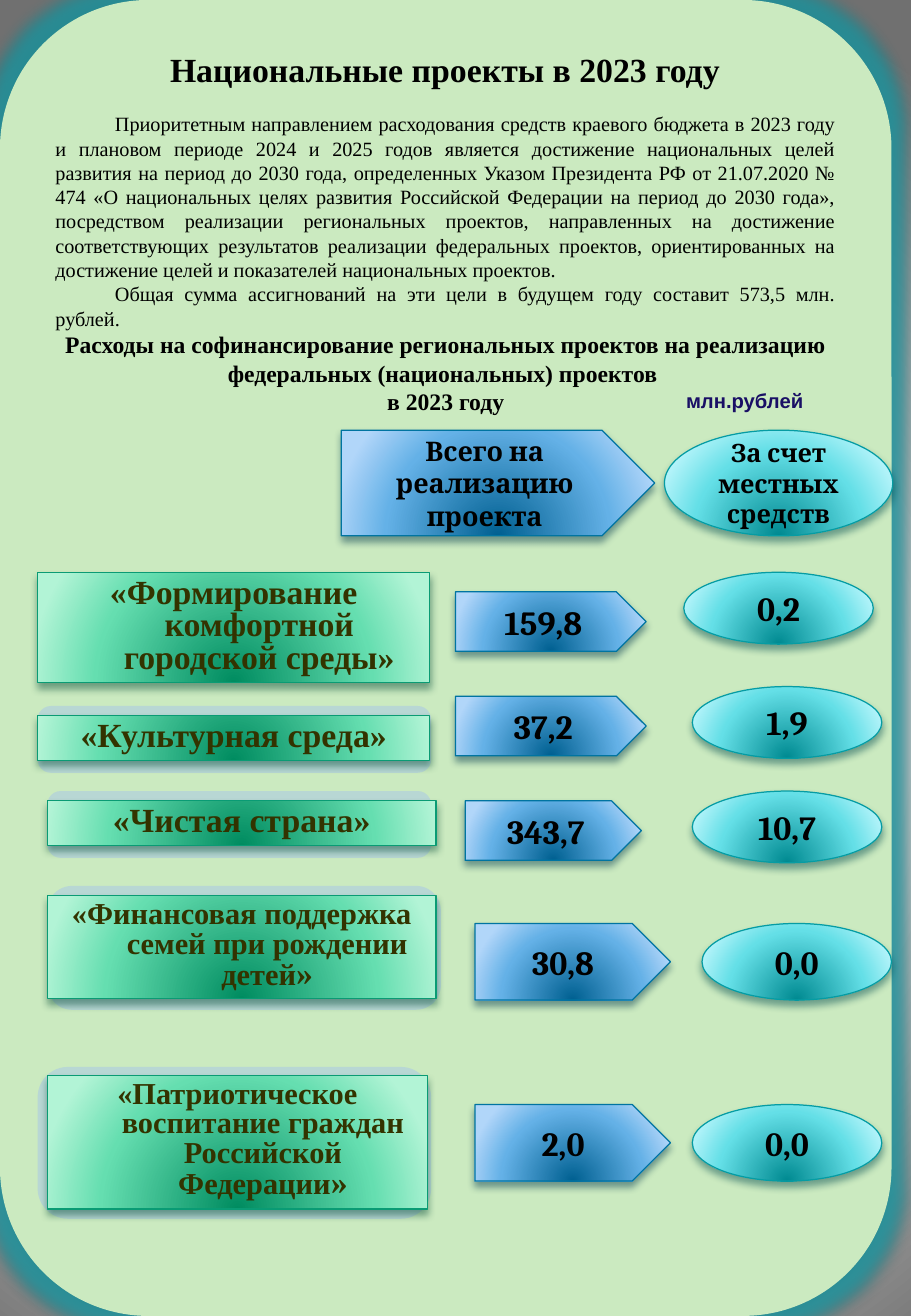
"""Build the slide on spending for national projects in 2023."""
from typing import NamedTuple, Optional

from lxml.etree import SubElement
from pptx import Presentation
from pptx.dml.color import RGBColor
from pptx.enum.shapes import MSO_SHAPE as Form
from pptx.enum.text import MSO_ANCHOR as Anchor, MSO_AUTO_SIZE as Fit, PP_ALIGN as Align
from pptx.oxml.ns import qn
from pptx.util import Inches, Pt

BLACK = RGBColor(0x00, 0x00, 0x00)
OLIVE = RGBColor(0x33, 0x33, 0x00)
NAVY = RGBColor(0x19, 0x0F, 0x65)
LIME = RGBColor(0xCB, 0xEA, 0xC0)
HAZE = RGBColor(0xA5, 0xC4, 0xE9)
TEAL = RGBColor(0x1A, 0x9D, 0xA8)
WHITE = RGBColor(0xFF, 0xFF, 0xFF)
GREY = RGBColor(0x70, 0x70, 0x70)
SERIF, SLAB, SANS = "Times New Roman", "Cambria", "Arial"


class Box(NamedTuple):
    left: float
    top: float
    width: float
    height: float


class Skin(NamedTuple):
    form: Form
    dark: RGBColor
    mid: RGBColor
    pale: RGBColor
    edge: RGBColor
    shade: RGBColor


class Row(NamedTuple):
    name: str
    tail: str
    size: int
    bar: Box
    halo: Optional[Box]
    total: str
    arrow: Box
    local: str
    oval: Box


class Part(NamedTuple):
    text: str
    size: int
    bold: bool
    align: Align
    indent: float


def skin(form: Form, *codes: str) -> Skin:
    """Make a skin from hex codes."""
    return Skin(form, *map(RGBColor.from_string, codes))


ARROW = skin(Form.PENTAGON, "006091", "64B1E7", "B1D6F9", "0074A1", "00374C")
OVAL = skin(Form.OVAL, "008A91", "64DFE7", "B1F3F9", "069CA3", "024B4E")
BAR = skin(Form.RECTANGLE, "008C60", "65DEB0", "B2F4D6", "0A9B74", "044A37")

ROWS = [
    Row("«Формирование комфортной городской среды»", "", 20, Box(0.31, 4.71, 3.23, 0.91), None,
        "159,8", Box(3.75, 4.87, 1.57, 0.49), "0,2", Box(5.63, 4.71, 1.56, 0.59)),
    Row("«Культурная среда»", "", 20, Box(0.31, 5.89, 3.23, 0.37), Box(0.31, 5.81, 3.24, 0.55),
        "37,2", Box(3.75, 5.73, 1.57, 0.49), "1,9", Box(5.7, 5.65, 1.56, 0.59)),
    Row("«Чистая страна»", "", 20, Box(0.39, 6.59, 3.2, 0.37), Box(0.39, 6.51, 3.16, 0.55),
        "343,7", Box(3.83, 6.59, 1.45, 0.49), "10,7", Box(5.7, 6.51, 1.56, 0.59)),
    Row("«Финансовая поддержка семей при рождении детей", "»", 18,
        Box(0.39, 7.37, 3.2, 0.85), Box(0.39, 7.29, 3.24, 1.02),
        "30,8", Box(3.91, 7.6, 1.61, 0.63), "0,0", Box(5.78, 7.6, 1.56, 0.63)),
    Row("«Патриотическое воспитание граждан Российской Федерации", "»", 18,
        Box(0.39, 8.85, 3.13, 1.1), Box(0.31, 8.78, 3.24, 1.25),
        "2,0", Box(3.91, 9.09, 1.61, 0.63), "0,0", Box(5.7, 9.09, 1.56, 0.63)),
]
PARTS = [
    Part("Приоритетным направлением расходования средств краевого бюджета в 2023 году и плановом "
         "периоде 2024 и 2025 годов является достижение национальных целей развития на период до "
         "2030 года, определенных Указом Президента РФ от 21.07.2020 № 474 «О национальных целях "
         "развития Российской Федерации на период до 2030 года», посредством реализации "
         "региональных проектов, направленных на достижение соответствующих результатов "
         "реализации федеральных проектов, ориентированных на достижение целей и показателей "
         "национальных проектов.", 12, False, Align.JUSTIFY, 0.49),
    Part("Общая сумма ассигнований на эти цели в будущем году составит 573,5 млн. рублей. ",
         12, False, Align.JUSTIFY, 0.49),
    Part("Расходы на софинансирование региональных проектов на реализацию федеральных "
         "(национальных) проектов ", 14, True, Align.CENTER, 0),
    Part("в 2023 году", 14, True, Align.CENTER, 0),
]


def place(box: Box) -> list:
    """Turn a box into lengths."""
    return [Inches(side) for side in box]


def write(para, text: str, size: float, face: str, color: RGBColor, bold: bool = True) -> None:
    """Add one run."""
    run = para.add_run()
    run.text = text
    run.font.size, run.font.name, run.font.bold = Pt(size), face, bold
    run.font.color.rgb = color


def indent(para, left: float, first: float) -> None:
    """Set the left margin and the first-line indent."""
    props = para._p.get_or_add_pPr()
    props.set("marL", str(Inches(left)))
    props.set("indent", str(Inches(first)))


def tint(parent, color: RGBColor, alpha: int = 100) -> None:
    """Add a colour with its opacity."""
    node = SubElement(parent, qn("a:srgbClr"), val=str(color))
    SubElement(node, qn("a:alpha"), val=str(alpha * 1000))


def blend(root, stops: list, focus: tuple) -> None:
    """Swap the first solid fill for a round gradient."""
    solid = root.find(".//" + qn("a:solidFill"))
    solid.clear()
    solid.tag = qn("a:gradFill")
    chain = SubElement(solid, qn("a:gsLst"))
    for spot, color in stops:
        tint(SubElement(chain, qn("a:gs"), pos=str(spot * 1000)), color)
    way = SubElement(solid, qn("a:path"), {"path": "circle"})
    sides = {key: str(part * 1000) for key, part in zip("ltrb", focus)}
    SubElement(way, qn("a:fillToRect"), sides)


def shade(shape, color: RGBColor, alpha: int, blur: float, dist: float) -> None:
    """Add a shadow that falls straight down."""
    node = SubElement(shape.element.spPr.find(qn("a:effectLst")), qn("a:outerShdw"),
                      blurRad=str(Pt(blur)), dist=str(Pt(dist)), dir="5400000", rotWithShape="0")
    tint(node, color, alpha)


def plain(slide, form: Form, box: Box, color: RGBColor):
    """Add a flat shape with no outline."""
    shape = slide.shapes.add_shape(form, *place(box))
    shape.shadow.inherit = False
    shape.fill.solid()
    shape.fill.fore_color.rgb = color
    shape.line.fill.background()
    return shape


def glossy(slide, look: Skin, box: Box):
    """Add a gradient shape and return it with its paragraph."""
    shape = plain(slide, look.form, box, look.mid)
    blend(shape.element, [(0, look.dark), (68, look.mid), (100, look.pale)], (50, 130, 50, -30))
    shape.line.color.rgb = look.edge
    shape.line.width = Pt(0.75)
    shade(shape, look.shade, 48, 4.5, 3)
    frame = shape.text_frame
    frame.word_wrap = True
    frame.vertical_anchor = Anchor.MIDDLE
    frame.paragraphs[0].alignment = Align.CENTER
    return shape, frame.paragraphs[0]


def badge(slide, look: Skin, box: Box, text: str, size: int = 20) -> None:
    """Add an arrow or oval with its words."""
    write(glossy(slide, look, box)[1], text, size, SLAB, BLACK)


def label(slide, row: Row) -> None:
    """Add a project name on its green bar."""
    if row.halo:
        halo = plain(slide, Form.ROUNDED_RECTANGLE, row.halo, HAZE)
        halo.adjustments[0] = 0.2
        fill = halo.element.find(".//" + qn("a:solidFill"))
        fill.clear()
        tint(fill, HAZE, 49)
    shape, para = glossy(slide, BAR, row.bar)
    shape.text_frame.vertical_anchor = Anchor.TOP
    shape.text_frame.auto_size = Fit.SHAPE_TO_FIT_TEXT
    para.line_spacing, para.space_before = 0.8, Pt(row.size / 5)
    indent(para, 0.42, -0.42)
    write(para, row.name, row.size, SERIF, OLIVE)
    if row.tail:
        write(para, row.tail, 20, SERIF, OLIVE)


def panel(slide) -> None:
    """Add the green panel with the opening text."""
    shape = plain(slide, Form.ROUNDED_RECTANGLE, Box(0, 0, 7.34, 10.83), LIME)
    glow = SubElement(shape.element.spPr.find(qn("a:effectLst")), qn("a:glow"), rad=str(Pt(18)))
    tint(glow, TEAL, 75)
    shade(shape, BLACK, 32, 3.5, 2.2)
    slide.shapes.element.insert(2, shape.element)
    frame = shape.text_frame
    frame.word_wrap, frame.vertical_anchor = True, Anchor.TOP
    frame.margin_top = Inches(0.56)
    for spot, part in enumerate(PARTS):
        para = frame.add_paragraph() if spot else frame.paragraphs[0]
        para.alignment = part.align
        indent(para, 0, part.indent)
        write(para, part.text, part.size, SERIF, BLACK, part.bold)


def head(slide) -> None:
    """Fill the title and the unit note."""
    title = slide.shapes.title
    title.left, title.top, title.width, title.height = place(Box(0.45, 0.4, 6.43, 0.33))
    frame = title.text_frame
    frame.margin_left = frame.margin_right = frame.margin_top = frame.margin_bottom = 0
    frame.vertical_anchor, frame.auto_size = Anchor.TOP, Fit.NONE
    frame.paragraphs[0].alignment = Align.CENTER
    write(frame.paragraphs[0], "Национальные проекты в 2023 году", 20, SERIF, BLACK)
    note = slide.shapes.add_textbox(*place(Box(5.55, 3.15, 1.64, 0.3))).text_frame
    note.word_wrap, note.auto_size = True, Fit.SHAPE_TO_FIT_TEXT
    write(note.paragraphs[0], "млн.рублей", 12, SANS, NAVY)


def main() -> None:
    """Draw and save the slide."""
    deck = Presentation()
    deck.slide_width, deck.slide_height = Inches(7.5), Inches(10.83)
    slide = deck.slides.add_slide(deck.slide_layouts[5])
    slide.background.fill.solid()
    blend(slide.element, [(0, WHITE), (25, WHITE), (100, GREY)], (10, 110, 10, 100))
    panel(slide)
    head(slide)
    badge(slide, ARROW, Box(2.81, 3.54, 2.58, 0.87), "Всего на реализацию проекта", 16)
    badge(slide, OVAL, Box(5.47, 3.54, 1.88, 0.87), "За счет местных средств", 15)
    for row in ROWS:
        label(slide, row)
        badge(slide, ARROW, row.arrow, row.total)
        badge(slide, OVAL, row.oval, row.local)
    deck.save("out.pptx")


if __name__ == "__main__":
    main()
